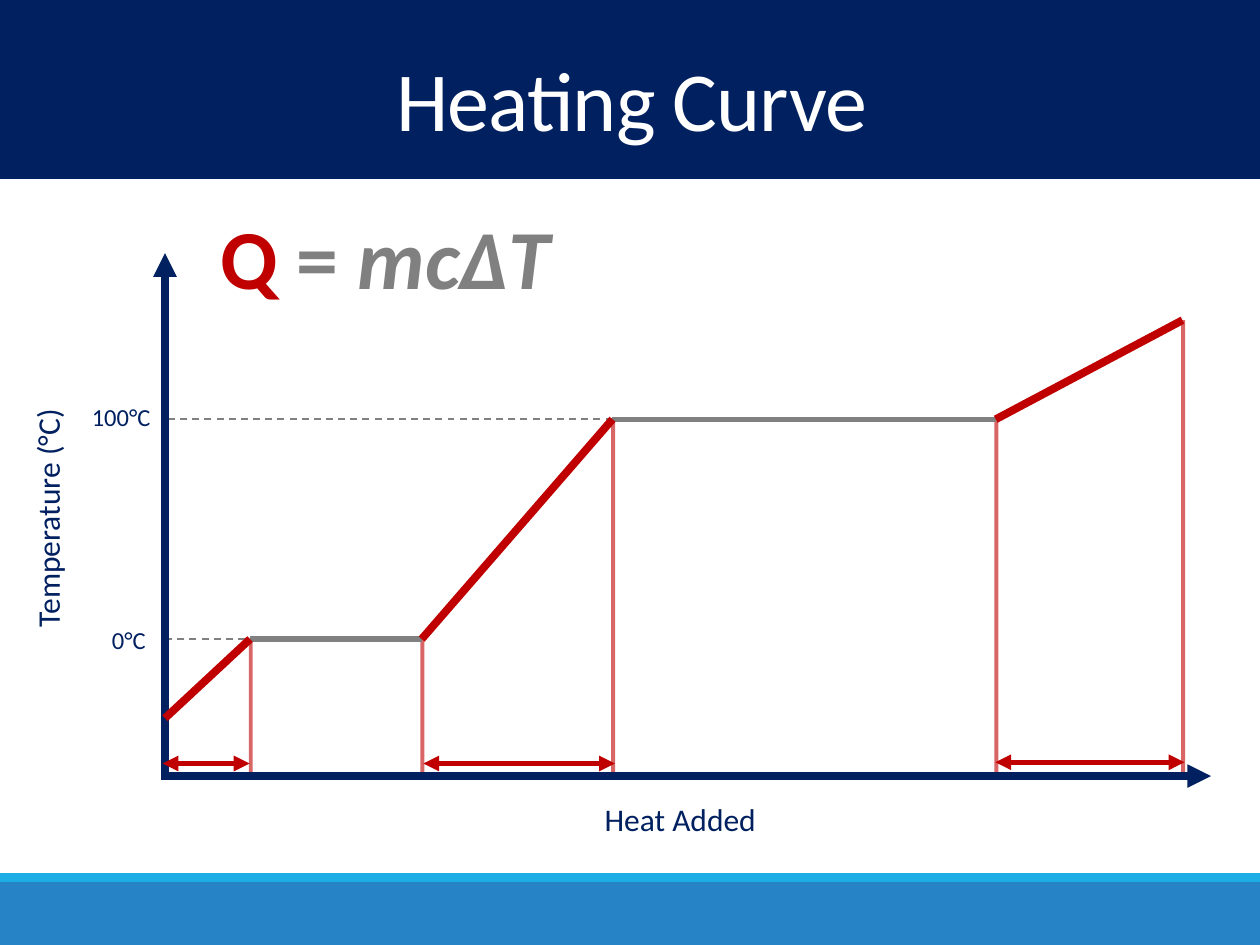
from lxml import etree
from pptx import Presentation
from pptx.dml.color import RGBColor
from pptx.enum import dml, shapes, text
from pptx.oxml.ns import qn
from pptx.util import Pt

COLORS = {"navy": "002060", "red": "C00000", "gray": "808080",
          "white": "FFFFFF", "blue": "2683C6", "sky": "1CADE4"}

deck = Presentation()
deck.slide_width, deck.slide_height = Pt(720), Pt(540)
slide = deck.slides.add_slide(deck.slide_layouts[6])


def write(runs, left, top, width, height, size=18, color="navy", align="LEFT",
          anchor="TOP", wrap=False, rotation=0, line_spacing=None, tracking=None):
    """Add a text box; each run is (words, format overrides)."""
    box = slide.shapes.add_textbox(Pt(left), Pt(top), Pt(width), Pt(height))
    box.rotation = rotation
    frame = box.text_frame
    frame.word_wrap = wrap
    frame.vertical_anchor = text.MSO_ANCHOR[anchor]
    if not wrap:
        frame.auto_size = text.MSO_AUTO_SIZE.SHAPE_TO_FIT_TEXT
    line = frame.paragraphs[0]
    line.alignment = text.PP_ALIGN[align]
    if line_spacing:
        line.line_spacing = line_spacing
    for words, look in runs:
        run = line.add_run()
        run.text = words
        run.font.name, run.font.size = "Calibri", Pt(size)
        run.font.bold, run.font.italic = look.get("bold"), look.get("italic")
        run.font.color.rgb = RGBColor.from_string(COLORS[look.get("color", color)])
        if tracking:
            run.font._element.set("spc", str(int(tracking * 100)))


def draw_line(start, end, color, width, dashed=False, opacity=None, arrows=()):
    """Add a straight line; arrows may hold headEnd and tailEnd."""
    line = slide.shapes.add_connector(
        shapes.MSO_CONNECTOR.STRAIGHT, *(Pt(v) for v in (*start, *end)))
    line.line.width = Pt(width)
    line.line.color.rgb = RGBColor.from_string(COLORS[color])
    if dashed:
        line.line.dash_style = dml.MSO_LINE.DASH
    props = line._element.spPr
    outline = props.find(qn("a:ln"))
    if opacity:
        tint = outline.find(".//" + qn("a:srgbClr"))
        etree.SubElement(tint, qn("a:alpha")).set("val", str(opacity * 1000))
    for arrow in arrows:
        etree.SubElement(outline, qn("a:" + arrow)).set("type", "triangle")
    etree.SubElement(props, qn("a:effectLst"))


# Header and footer bands
for top, height, color in ((504, 36, "blue"), (499, 5, "sky"), (0, 102.24, "navy")):
    band = slide.shapes.add_shape(shapes.MSO_SHAPE.RECTANGLE,
                                  Pt(0), Pt(top), Pt(720), Pt(height))
    band.shadow.inherit = False
    band.fill.solid()
    band.fill.fore_color.rgb = RGBColor.from_string(COLORS[color])
    band.line.fill.background()

write([("Heating Curve", {})], 2, 30.24, 718, 60.5, size=48, color="white",
      align="CENTER", anchor="MIDDLE", wrap=True, line_spacing=0.85, tracking=-0.5)

# Corners of the curve
axis_x, axis_y = 94.3, 443.5
freezing, boiling = 365.2, 239.6
curve = [(axis_x, 410.4), (142.9, freezing), (241, freezing),
         (350, boiling), (569, boiling), (675.7, 183)]

# Drop lines from the curve to the heat axis
for x, y in curve[1:]:
    draw_line((x + 0.4, y), (x + 0.4, axis_y), "red", 2.25, opacity=60)

# Dashed temperature levels
for x, level in ((350, boiling), (147, freezing)):
    draw_line((x, level), (axis_x, level), "gray", 1, dashed=True)

# Axes
draw_line((axis_x, 445.7), (axis_x, 144.7), "navy", 4.5, arrows=["tailEnd"])
draw_line((axis_x, axis_y), (692, axis_y), "navy", 4.5, arrows=["tailEnd"])

# Phase changes are flat and gray, temperature rises are red
segments = list(zip(curve, curve[1:]))
for start, end in segments[1::2]:
    draw_line(start, end, "gray", 3)

# Axis titles and temperature labels
write([("Heat Added", {})], 338.4, 453.6, 102.2, 28.8)
write([("Temperature (°C)", {})], -43.2, 280.8, 140.4, 28.8, rotation=270)
write([("0°C", {})], 56.9, 353.5, 33.8, 24.5, size=14)
write([("100°C", {})], 45.4, 226.1, 48.2, 24.5, size=14)

for start, end in segments[::2]:
    draw_line(start, end, "red", 4.5)

# Formula for the rising segments
write([("Q ", {"color": "red", "bold": True}),
       ("= ", {"bold": True}),
       ("mcΔT", {"bold": True, "italic": True})],
      118.8, 113.8, 204.5, 65.5, size=48, color="gray")

# Heat spans under the rising segments
for (left, right, y) in ((92.9, 142.6, 436.3), (241.9, 351.4, 436.3),
                         (568.8, 676.8, 435.6)):
    draw_line((left, y), (right, y), "red", 3, arrows=["headEnd", "tailEnd"])

deck.save("out.pptx")
